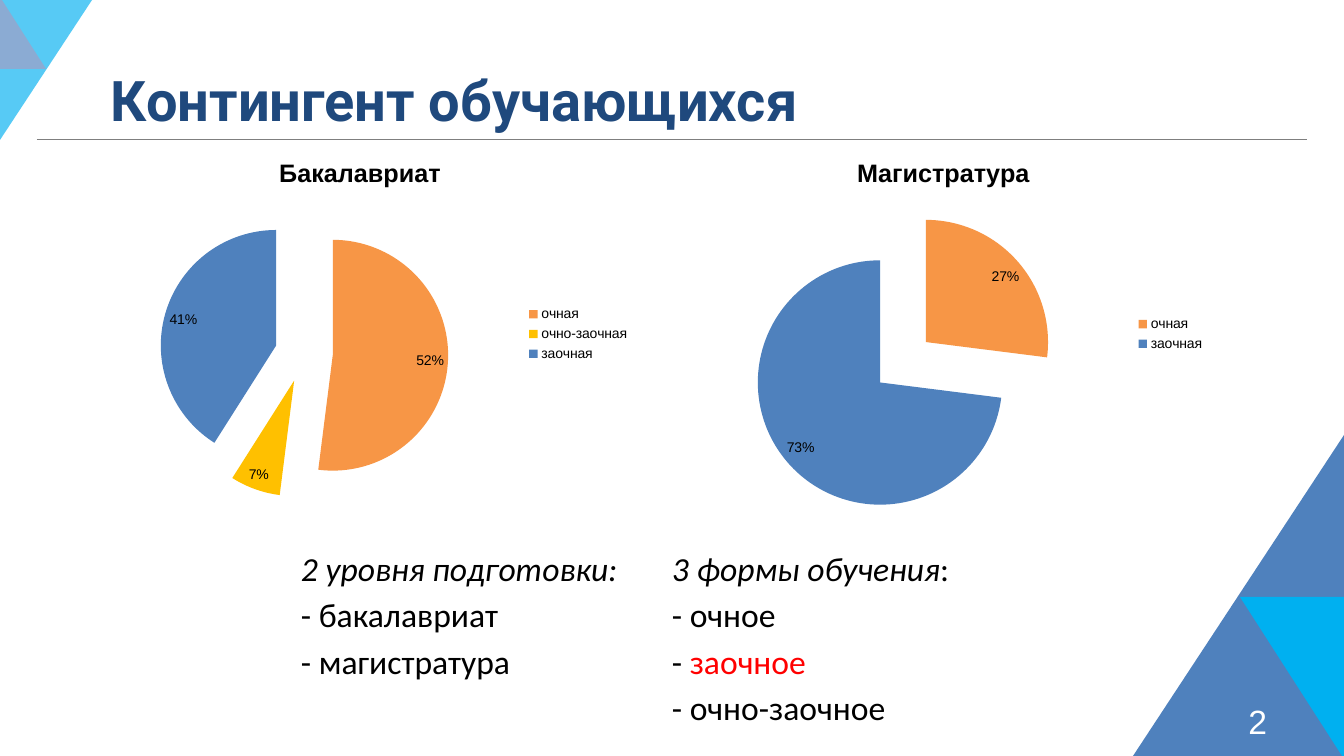
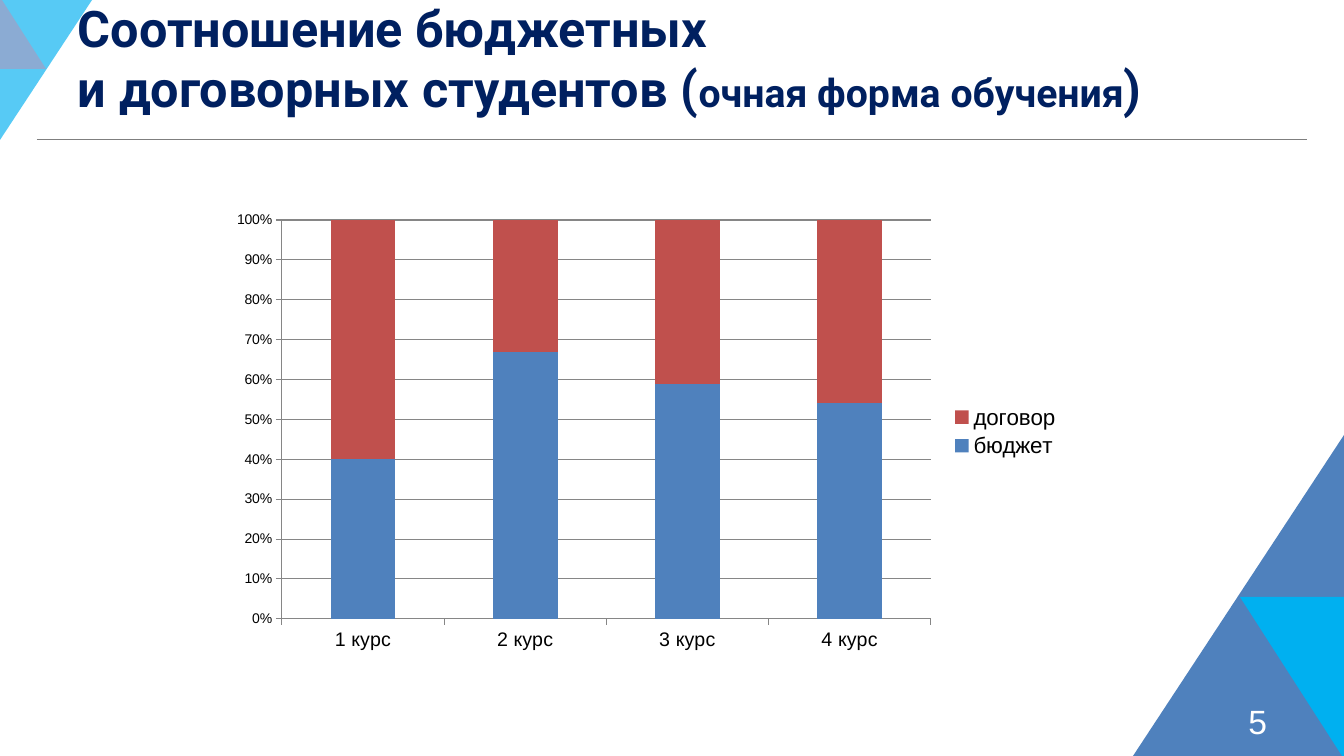
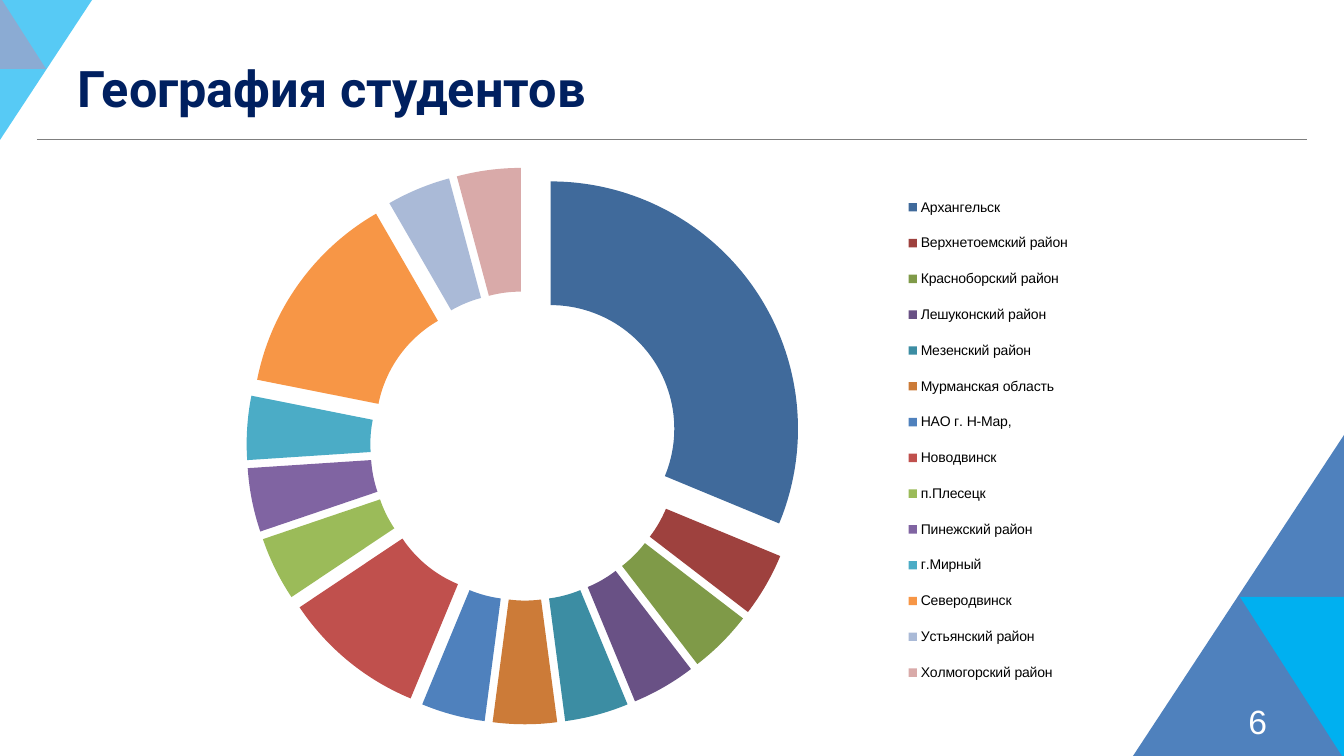
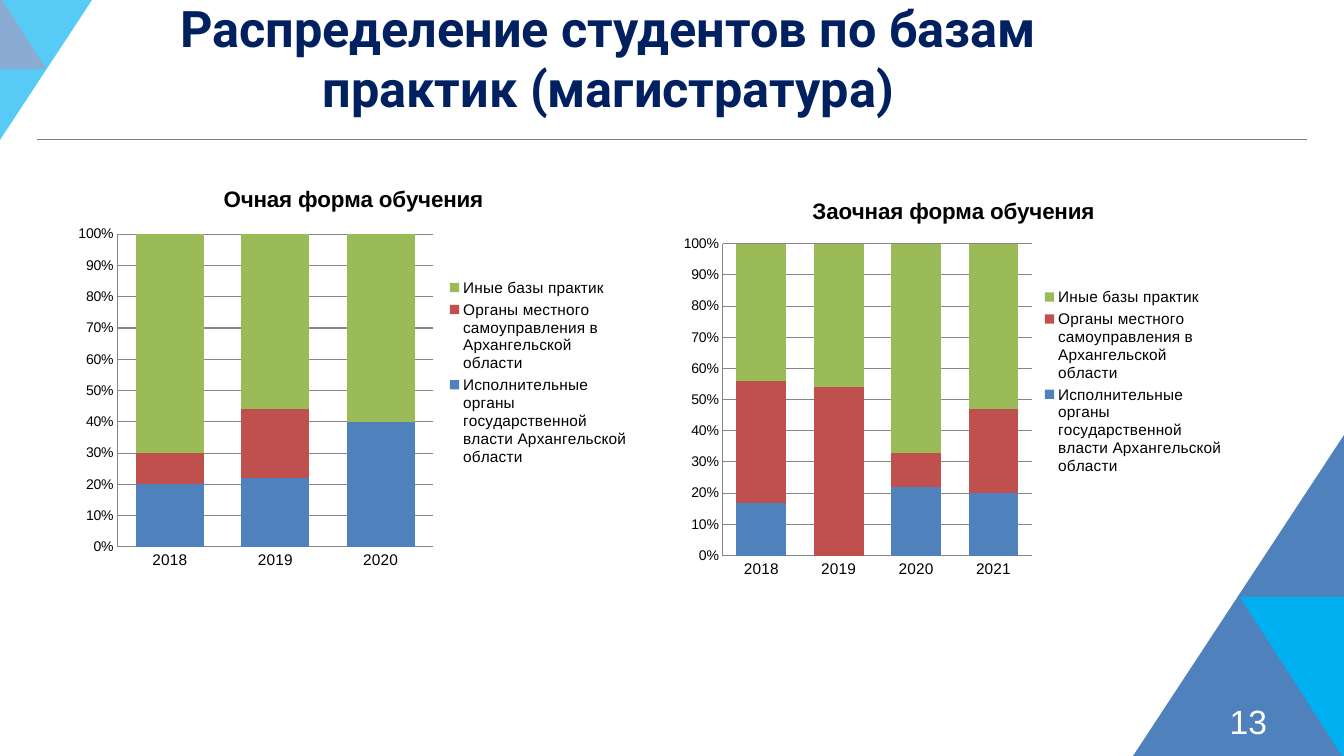
from lxml import etree
from pptx import Presentation
from pptx.chart.data import CategoryChartData
from pptx.dml.color import RGBColor
from pptx.enum.chart import XL_CHART_TYPE as CT, XL_LABEL_POSITION as LP
from pptx.enum.chart import XL_LEGEND_POSITION as LEG, XL_TICK_MARK as TM
from pptx.enum.shapes import MSO_CONNECTOR as CONN, MSO_SHAPE as SHAPE
from pptx.enum.text import MSO_ANCHOR as ANC, PP_ALIGN as AL
from pptx.oxml.ns import qn
from pptx.util import Emu, Pt

COLORS = {
    "white": "FFFFFF", "black": "000000", "red": "FF0000",
    "cyan": "00B0F0", "steel": "4F81BD", "rule": "7F7F7F", "grid": "868686",
    "title": "002060", "title_light": "1F497D",
    "blue": "4F81BD", "brick": "C0504D", "green": "9BBB59",
    "violet": "8064A2", "teal": "4BACC6", "orange": "F79646",
    "gold": "FFC000",
    "dark_blue": "406A9B", "dark_brick": "9E413E", "dark_green": "7F9A48",
    "dark_violet": "695185", "dark_teal": "3C8DA3", "dark_orange": "CC7B38",
    "pale_blue": "AABAD7", "pale_brick": "D9AAA9",
}


def px(n):
    return Emu(round(n * 914400 / 100.8))


def rgb(name):
    return RGBColor.from_string(COLORS[name])


def put(obj, **fmt):
    for key, value in fmt.items():
        setattr(obj, key, value)


def style(font, size, color="black", **fmt):
    put(font, size=Pt(size), **fmt)
    font.color.rgb = rgb(color)


def set_layout(parent, index, box, inner=False):
    """Place a chart part by fractions of the chart frame."""
    for old in parent.findall(qn("c:layout")):
        parent.remove(old)
    layout = etree.Element(qn("c:layout"))
    manual = etree.SubElement(layout, qn("c:manualLayout"))
    values = [("layoutTarget", "inner")] if inner else []
    values += [("xMode", "edge"), ("yMode", "edge"), *zip("xywh", box)]
    for tag, value in values:
        etree.SubElement(manual, qn("c:" + tag)).set("val", str(value))
    parent.insert(index, layout)


class Deck:
    def __init__(self):
        self.prs = Presentation()
        put(self.prs, slide_width=px(1344), slide_height=px(756))
        self.s = None

    def slide(self, number):
        self.s = self.prs.slides.add_slide(self.prs.slide_layouts[6])
        # Corner triangles under a translucent veil
        self.shape(SHAPE.RIGHT_TRIANGLE, (0, -3, 94, 143), "cyan", flip=True)
        self.shape(SHAPE.RIGHT_TRIANGLE, (-13, 10, 72, 46), "steel", 270, True)
        self.shape(SHAPE.RECTANGLE, (0, -4, 172, 223), "white", alpha=34)
        self.shape(SHAPE.RIGHT_TRIANGLE, (1131, 435, 213, 324), "steel", 180, True)
        self.shape(SHAPE.RIGHT_TRIANGLE, (1211, 626, 162, 104), "cyan", 90, True)
        self.rule(37, 1307, 140)
        self.text((964, 701, 313, 40), [[(str(number), {})]], size=24,
                  color="white", name="Arial", anchor=ANC.MIDDLE, align=AL.RIGHT)

    def shape(self, kind, box, color, rotation=0, flip=False, alpha=None):
        sp = self.s.shapes.add_shape(kind, *map(px, box))
        sp.shadow.inherit = False
        sp.rotation = rotation
        sp.fill.solid()
        sp.fill.fore_color.rgb = rgb(color)
        sp.line.fill.background()
        if flip:
            sp._element.spPr.find(qn("a:xfrm")).set("flipV", "1")
        if alpha:
            clr = sp._element.spPr.find(".//" + qn("a:srgbClr"))
            etree.SubElement(clr, qn("a:alpha")).set("val", str(alpha * 1000))

    def rule(self, x1, x2, y):
        line = self.s.shapes.add_connector(CONN.STRAIGHT, px(x1), px(y), px(x2), px(y))
        line.line.width = Pt(0.75)
        line.line.color.rgb = rgb("rule")
        etree.SubElement(line._element.spPr, qn("a:effectLst"))

    def text(self, box, paragraphs, size, color="black", name="Calibri",
             anchor=ANC.TOP, align=AL.LEFT, spacing=None, **fmt):
        tf = self.s.shapes.add_textbox(*map(px, box)).text_frame
        put(tf, word_wrap=True, vertical_anchor=anchor)
        for i, runs in enumerate(paragraphs):
            p = tf.add_paragraph() if i else tf.paragraphs[0]
            put(p, alignment=align, line_spacing=spacing)
            for words, own in runs:
                if words == "\n":
                    p.add_line_break()
                    continue
                r = p.add_run()
                r.text = words
                style(r.font, **{"size": size, "color": color, "name": name, **fmt, **own})

    def title(self, *runs, box=(68, 13, 1081, 110), size=36, color="title", **fmt):
        self.text(box, [runs], size=size, color=color, name="Roboto",
                  bold=True, anchor=ANC.BOTTOM, **fmt)

    def chart(self, kind, box, cats, series, title=None, title_size=18,
              legend_size=10, plot_box=None):
        data = CategoryChartData()
        data.categories = cats
        for name, values in series:
            data.add_series(name, values)
        chart = self.s.shapes.add_chart(kind, *map(px, box), data).chart
        style(chart.font, 10, name="Arial")
        chart.has_title = bool(title)
        if title:
            tf = chart.chart_title.text_frame
            tf.text = title
            style(tf.paragraphs[0].runs[0].font, title_size, name="Arial", bold=True)
        chart.has_legend = True
        put(chart.legend, position=LEG.RIGHT, include_in_layout=False)
        style(chart.legend.font, legend_size, name="Arial")
        if plot_box:
            area = chart._chartSpace.find(".//" + qn("c:plotArea"))
            set_layout(area, 0, plot_box, inner=True)
        return chart

    def round_chart(self, kind, box, slices, labels=True, **fmt):
        cats, values, colors = zip(*slices)
        chart = self.chart(kind, box, cats, [("Series 1", values)], **fmt)
        plot = chart.plots[0]
        plot.vary_by_categories = True
        ser = plot.series[0]
        explosion = etree.Element(qn("c:explosion"))
        explosion.set("val", "25")
        ser._element.find(qn("c:tx")).addnext(explosion)
        for i, color in enumerate(colors):
            fill = ser.points[i].format.fill
            fill.solid()
            fill.fore_color.rgb = rgb(color)
        plot.has_data_labels = labels
        if labels:
            put(plot.data_labels, show_percentage=True, show_value=False,
                number_format="0%", number_format_is_linked=False,
                position=LP.BEST_FIT)
            style(plot.data_labels.font, 10, name="Arial")
        return chart

    def stacked_chart(self, box, cats, series, cat_size, gap=150, tick=TM.NONE, **fmt):
        chart = self.chart(CT.COLUMN_STACKED_100, box, cats,
                           [(name, values) for name, values, _ in series], **fmt)
        plot = chart.plots[0]
        put(plot, gap_width=gap, overlap=100, vary_by_categories=False)
        for ser, (_, _, color) in zip(plot.series, series):
            ser.format.fill.solid()
            ser.format.fill.fore_color.rgb = rgb(color)
        for axis, size in ((chart.category_axis, cat_size), (chart.value_axis, 10)):
            put(axis, major_tick_mark=tick, minor_tick_mark=TM.NONE)
            style(axis.tick_labels.font, size, name="Arial")
            axis.format.line.color.rgb = rgb("grid")
        axis = chart.value_axis
        axis.has_major_gridlines = True
        axis.major_gridlines.format.line.color.rgb = rgb("grid")
        put(axis.tick_labels, number_format="0%", number_format_is_linked=False)


def main():
    d = Deck()

    # Student body
    d.slide(2)
    d.title(("Контингент обучающихся", {}), box=(101, 21, 1011, 118),
            size=40, color="title_light", spacing=0.9)
    d.round_chart(CT.PIE, (80, 139, 560, 390),
                  [("очная", 52, "orange"), ("очно-заочная", 7, "gold"),
                   ("заочная", 41, "blue")], title="Бакалавриат",
                  plot_box=(0.14, 0.18, 0.52, 0.74))
    d.round_chart(CT.PIE, (672, 139, 543, 390),
                  [("очная", 27, "orange"), ("заочная", 73, "blue")],
                  title="Магистратура")
    italic = {"italic": True}
    d.text((291, 537, 360, 150),
           [[("2 уровня подготовки:", italic)],
            [("- бакалавриат", {})],
            [("- магистратура", {})]], size=24, spacing=1.15)
    d.text((662, 537, 320, 196),
           [[("3 формы обучения", italic), (":", {})],
            [("- очное", {})],
            [("- ", {}), ("заочное", {"color": "red"})],
            [("- очно-заочное", {})]], size=24, spacing=1.15)

    # State-funded and paying students
    d.slide(5)
    d.title(("Соотношение бюджетных", {}), ("\n", {}), ("и договорных студентов (", {}),
            ("очная форма обучения", {"size": 28}), (")", {}), box=(68, 13, 1184, 110))
    d.stacked_chart((220, 203, 851, 457), [f"{n} курс" for n in range(1, 5)],
                    [("бюджет", (40, 67, 59, 54), "blue"),
                     ("договор", (60, 33, 41, 46), "brick")],
                    cat_size=14, tick=TM.OUTSIDE, legend_size=16)

    # Where students come from
    d.slide(6)
    d.title(("География студентов", {}))
    regions = [
        ("Архангельск", 30, "dark_blue"), ("Верхнетоемский район", 4, "dark_brick"),
        ("Красноборский район", 4, "dark_green"), ("Лешуконский район", 4, "dark_violet"),
        ("Мезенский район", 4, "dark_teal"), ("Мурманская область", 4, "dark_orange"),
        ("НАО г. Н-Мар,", 4, "blue"), ("Новодвинск", 9, "brick"),
        ("п.Плесецк", 4, "green"), ("Пинежский район", 4, "violet"),
        ("г.Мирный", 4, "teal"), ("Северодвинск", 13, "orange"),
        ("Устьянский район", 4, "pale_blue"), ("Холмогорский район", 4, "pale_brick"),
    ]
    chart = d.round_chart(CT.DOUGHNUT, (83, 156, 1065, 586), regions, labels=False,
                          plot_box=(0.15, 0.02, 0.53, 0.95))
    set_layout(chart.legend._element, 1, (0.75, 0.04, 0.2, 0.89))

    # Placements of master's students
    d.slide(13)
    d.title(("Распределение студентов по базам практик (магистратура)", {}),
            align=AL.CENTER)
    bases = [
        ("Исполнительные органы государственной власти Архангельской области", "blue"),
        ("Органы местного самоуправления в Архангельской области", "brick"),
        ("Иные базы практик", "green"),
    ]
    forms = [
        ("Очная форма обучения", (67, 167, 573, 410), None,
         [(20, 22, 40), (10, 22, 0), (70, 56, 60)]),
        ("Заочная форма обучения", (672, 179, 563, 405), (0.09, 0.16, 0.55, 0.77),
         [(17, 0, 22, 20), (39, 54, 11, 27), (44, 46, 67, 53)]),
    ]
    for title, box, plot_box, rows in forms:
        years = [str(2018 + i) for i in range(len(rows[0]))]
        series = [(name, row, color) for (name, color), row in zip(bases, rows)]
        d.stacked_chart(box, years, series, cat_size=11, gap=55, title=title,
                        title_size=16, legend_size=11, plot_box=plot_box)

    d.prs.save("out.pptx")


if __name__ == "__main__":
    main()
